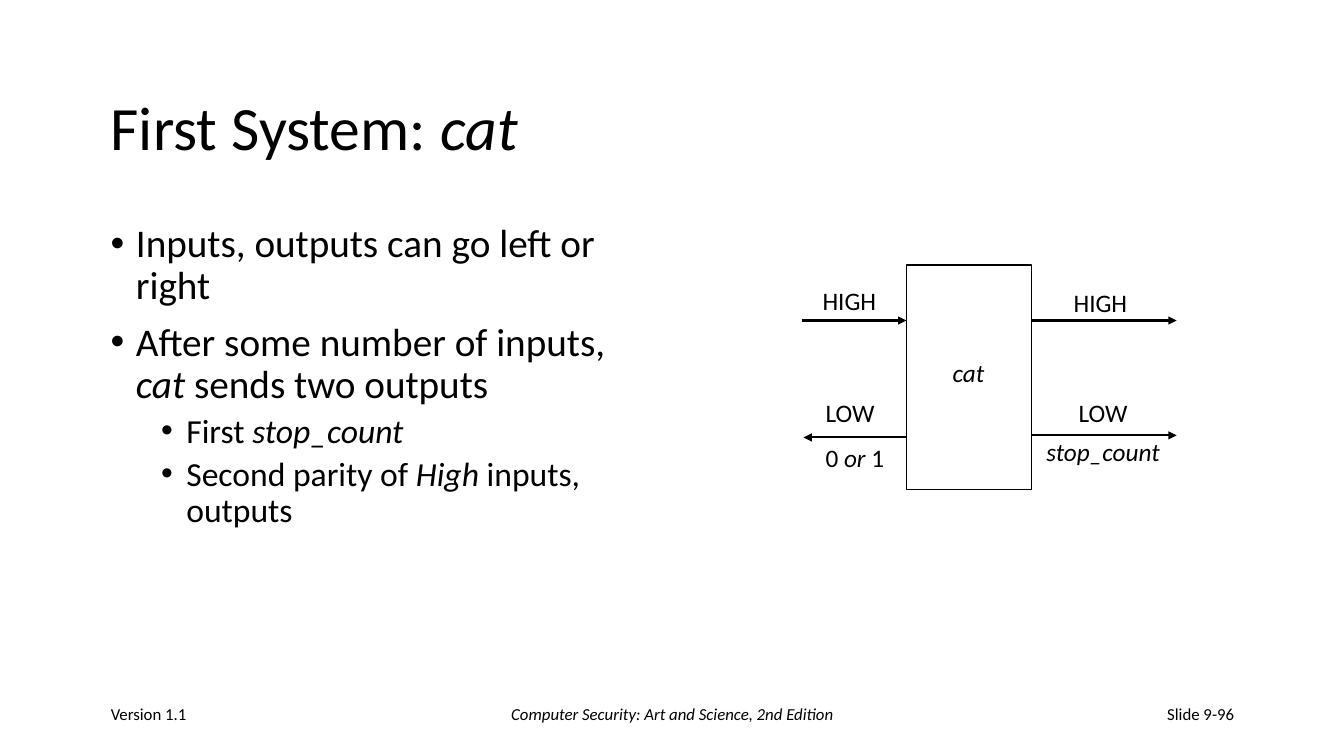
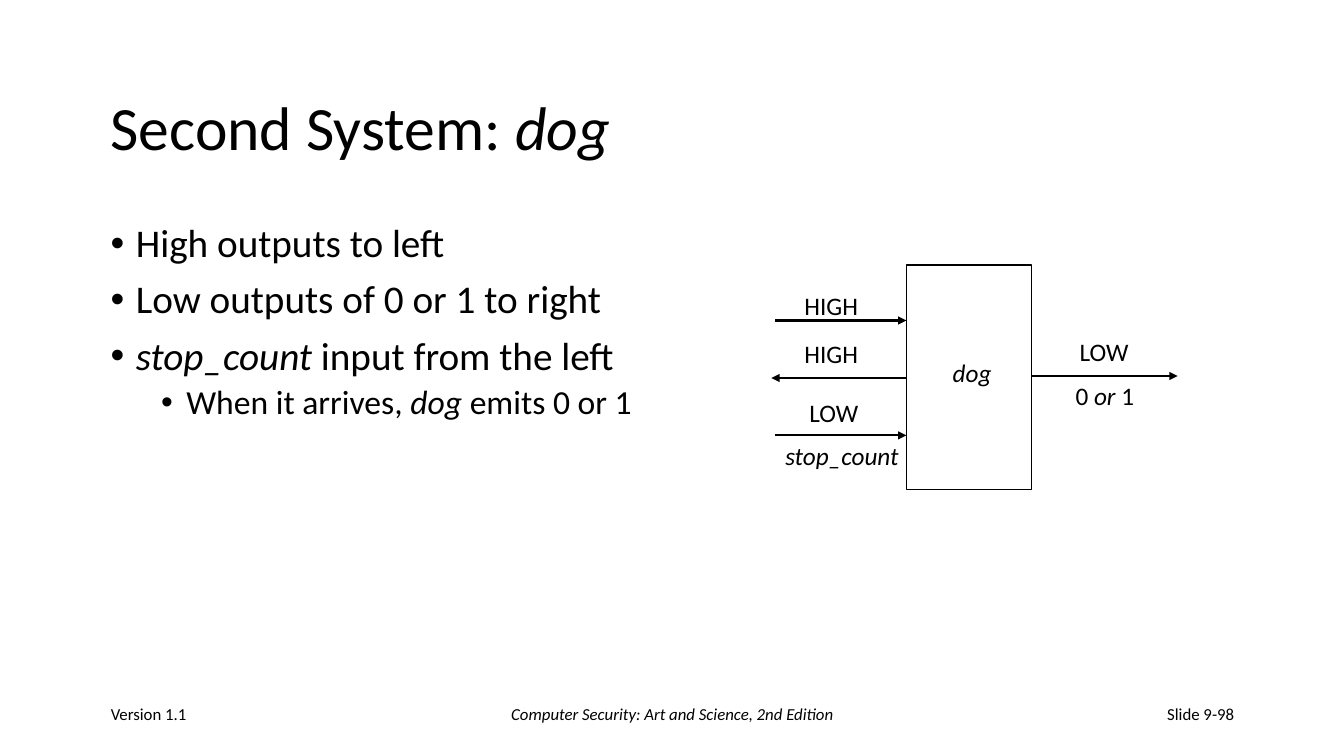
"""Build two slides that describe the cat and dog systems."""
from dataclasses import dataclass

from lxml.etree import SubElement
from pptx import Presentation
from pptx.dml.color import RGBColor
from pptx.enum.shapes import MSO_CONNECTOR as Connector, MSO_SHAPE as Shape
from pptx.enum.text import MSO_ANCHOR as Anchor, PP_ALIGN as Align
from pptx.oxml.ns import qn
from pptx.util import Pt

EMU_PER_PX = 9144


@dataclass(frozen=True)
class Theme:
    """Colours, font, type sizes and line widths of the deck."""
    ink: RGBColor = RGBColor(0, 0, 0)
    font: str = "Calibri"
    bullet_font: str = "Arial"
    title: int = 44
    body: tuple = (28, 24)
    label: int = 18
    footer: int = 12
    box_line: float = 1
    arrow_line: float = 1.5


THEME = Theme()
BODY_INDENTS = (25, 75)
BODY_GAPS = (10, 5)
HANGING = 25
SYSTEM_BOX = (899, 263, 124, 223)
LABEL_HEIGHT = 40
FOOTERS = (
    ((100, 683, 278, 50), "Version 1.1", Align.LEFT),
    ((456, 683, 422, 50), "*Computer Security: Art and Science, 2nd Edition*", Align.CENTER),
)
NUMBER_AREA = (956, 683, 278, 50)

SLIDES = (
    {
        "title": "First System: *cat*",
        "bullets": (
            (0, "Inputs, outputs can go left or right"),
            (0, "After some number of inputs, *cat* sends two outputs"),
            (1, "First *stop_count*"),
            (1, "Second parity of *High* inputs, outputs"),
        ),
        "number": "Slide 9-96",
        "arrows": ((795, 899, 318), (1023, 1167, 318), (1023, 1167, 432), (899, 797, 434)),
        "labels": (
            (935, 350, 52, "*cat*"),
            (806, 278, 74, "HIGH"),
            (1055, 280, 74, "HIGH"),
            (1060, 389, 69, "LOW"),
            (1028, 428, 140, "*stop_count*"),
            (809, 389, 69, "LOW"),
            (809, 434, 87, "0 *or* 1"),
        ),
    },
    {
        "title": "Second System: *dog*",
        "bullets": (
            (0, "High outputs to left"),
            (0, "Low outputs of 0 or 1 to right"),
            (0, "*stop_count* input from the left"),
            (1, "When it arrives, *dog* emits 0 or 1"),
        ),
        "number": "Slide 9-98",
        "arrows": ((769, 899, 318), (1023, 1168, 373), (899, 765, 375), (769, 899, 432)),
        "labels": (
            (935, 350, 59, "*dog*"),
            (788, 283, 74, "HIGH"),
            (788, 331, 74, "HIGH"),
            (1061, 329, 69, "LOW"),
            (769, 432, 140, "*stop_count*"),
            (793, 389, 69, "LOW"),
            (1057, 372, 87, "0 *or* 1"),
        ),
    },
)


def px(*lengths):
    """Turn px lengths into EMU."""
    return [length * EMU_PER_PX for length in lengths]


def write(paragraph, text, size):
    """Fill a paragraph, with parts between asterisks in italics."""
    font = paragraph.font
    font.name, font.size = THEME.font, Pt(size)
    font.color.rgb = THEME.ink
    for index, part in enumerate(text.split("*")):
        if part:
            run = paragraph.add_run()
            run.text = part
            if index % 2:
                run.font.italic = True


def add_frame(shapes, area, anchor=Anchor.TOP):
    """Add a wrapping text box and return its text frame."""
    frame = shapes.add_textbox(*px(*area)).text_frame
    frame.word_wrap = True
    frame.vertical_anchor = anchor
    return frame


def add_text(shapes, area, text, size, anchor=Anchor.MIDDLE, align=Align.LEFT):
    """Add a text box of one paragraph and return its text frame."""
    frame = add_frame(shapes, area, anchor)
    frame.paragraphs[0].alignment = align
    write(frame.paragraphs[0], text, size)
    return frame


def set_bullet(paragraph, level):
    """Give a paragraph a hanging bullet for its level."""
    properties = paragraph._p.get_or_add_pPr()
    left, hanging = px(BODY_INDENTS[level], HANGING)
    properties.set("marL", str(left))
    properties.set("indent", str(-hanging))
    SubElement(properties, qn("a:buFont"), typeface=THEME.bullet_font)
    SubElement(properties, qn("a:buChar"), char="•")


def add_bullets(slide, bullets):
    """Add the bulleted body text."""
    frame = add_frame(slide.shapes, (100, 217, 556, 450))
    for index, (level, text) in enumerate(bullets):
        paragraph = frame.add_paragraph() if index else frame.paragraphs[0]
        paragraph.level = level
        paragraph.line_spacing = 0.9
        paragraph.space_before = Pt(BODY_GAPS[level] if index else 0)
        set_bullet(paragraph, level)
        write(paragraph, text, THEME.body[level])


def add_arrow(shapes, start, end, y):
    """Add a horizontal arrow that points at its end."""
    arrow = shapes.add_connector(Connector.STRAIGHT, *px(start, y, end, y))
    arrow.line.color.rgb = THEME.ink
    arrow.line.width = Pt(THEME.arrow_line)
    properties = arrow.element.spPr
    SubElement(properties.find(qn("a:ln")), qn("a:tailEnd"), type="triangle")
    SubElement(properties, qn("a:effectLst"))


def add_diagram(slide, arrows, labels):
    """Add the system box with its arrows and labels as one group."""
    shapes = slide.shapes.add_group_shape().shapes
    box = shapes.add_shape(Shape.RECTANGLE, *px(*SYSTEM_BOX))
    box.shadow.inherit = False
    box.fill.background()
    box.line.color.rgb = THEME.ink
    box.line.width = Pt(THEME.box_line)
    for arrow in arrows:
        add_arrow(shapes, *arrow)
    for left, top, width, text in labels:
        area = (left, top, width, LABEL_HEIGHT)
        frame = add_text(shapes, area, text, THEME.label, Anchor.TOP)
        frame.margin_right = 0


def add_frame_texts(slide, title, number):
    """Add the title and the footers that all slides share."""
    heading = add_text(slide.shapes, (100, 67, 1133, 125), title, THEME.title)
    heading.paragraphs[0].line_spacing = 0.9
    for area, text, align in (*FOOTERS, (NUMBER_AREA, number, Align.RIGHT)):
        add_text(slide.shapes, area, text, THEME.footer, align=align)


def main():
    """Build and save the presentation."""
    presentation = Presentation()
    presentation.slide_width, presentation.slide_height = px(1333, 750)
    for content in SLIDES:
        slide = presentation.slides.add_slide(presentation.slide_layouts[6])
        add_frame_texts(slide, content["title"], content["number"])
        add_bullets(slide, content["bullets"])
        add_diagram(slide, content["arrows"], content["labels"])
    presentation.save("out.pptx")


if __name__ == "__main__":
    main()
